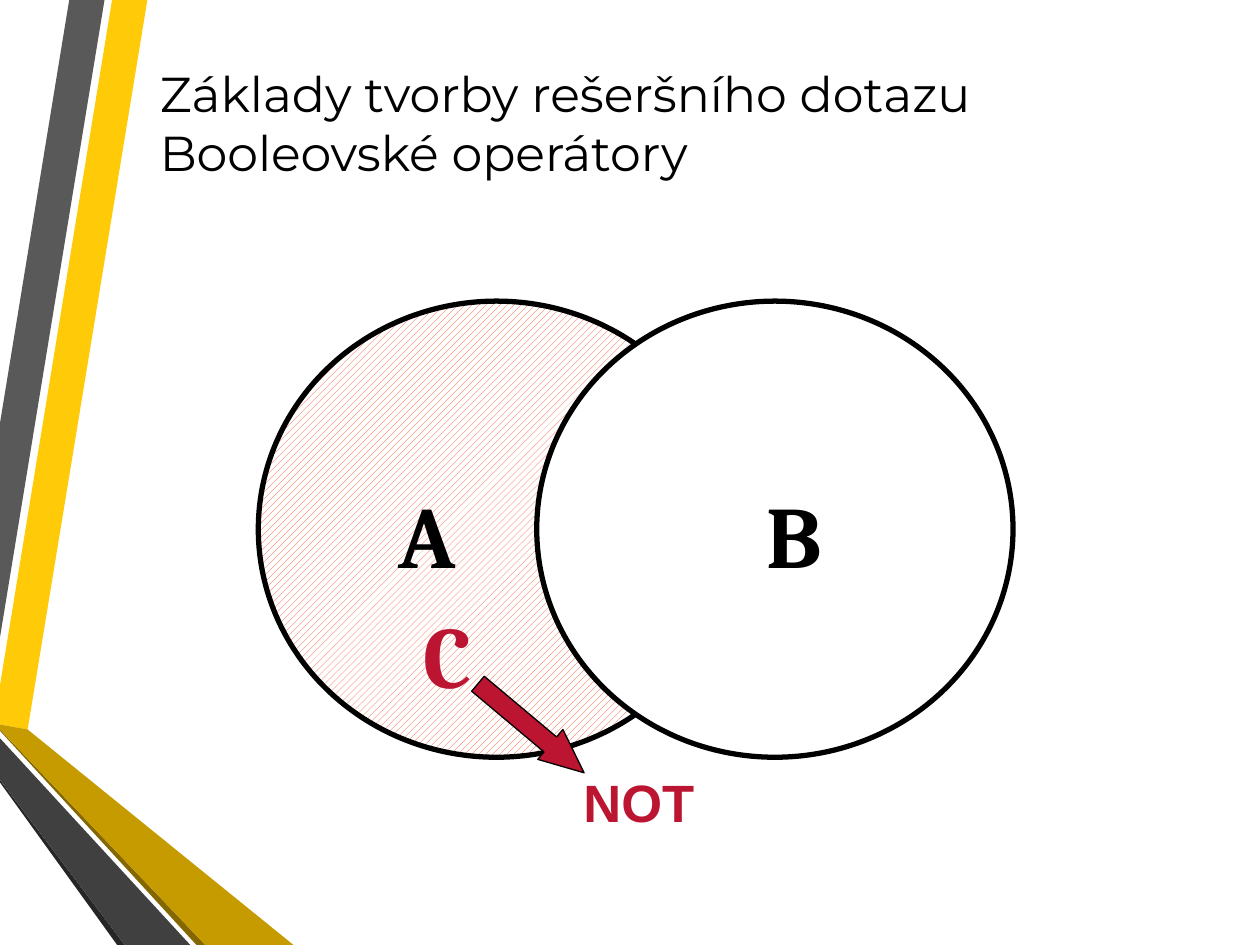
from pptx import Presentation
from pptx.dml.color import RGBColor
from pptx.enum.dml import MSO_PATTERN
from pptx.enum.shapes import MSO_SHAPE as SHAPE
from pptx.enum.text import MSO_ANCHOR as ANCHOR, PP_ALIGN as ALIGN
from pptx.util import Inches, Pt

COLORS = {
    "black": "000000", "white": "FFFFFF", "red": "BB1531", "hatch": "FE4A26",
    "yellow": "FFCA08", "gold": "C59B00", "dark_gold": "846700",
    "gray": "595959", "dark_gray": "404040", "charcoal": "262626",
}

# Ribbon corners in inches, back to front
RIBBONS = [
    ("yellow", [(0, 5.44), (0, 5.75), (0.22, 5.79), (1.17, 0), (0.89, 0)]),
    ("gray", [(0.83, 0), (0.55, 0), (0, 3.36), (0, 5.06)]),
    ("charcoal", [(0, 6.19), (0, 6.21), (0.93, 7.5), (0.99, 7.5)]),
    ("dark_gold", [(0, 5.79), (0, 5.8), (1.56, 7.5), (1.63, 7.5)]),
    ("gold", [(0, 5.79), (1.63, 7.5), (2.33, 7.5), (0.22, 5.79), (0, 5.75)]),
    ("dark_gray", [(0, 6.19), (0.99, 7.5), (1.51, 7.5), (0, 5.86)]),
]


def rgb(name):
    return RGBColor.from_string(COLORS[name])


def add_ribbon(s, color, points):
    corners = [(Inches(x), Inches(y)) for x, y in points]
    builder = s.shapes.build_freeform(*corners[0], scale=1.0)
    builder.add_line_segments(corners[1:], close=True)
    sp = builder.convert_to_shape()
    sp.shadow.inherit = False
    sp.fill.solid()
    sp.fill.fore_color.rgb = rgb(color)
    sp.line.fill.background()


def add_outlined(s, kind, box, color, line_width):
    sp = s.shapes.add_shape(kind, *map(Inches, box))
    sp.shadow.inherit = False
    sp.fill.solid()
    sp.fill.fore_color.rgb = rgb(color)
    sp.line.color.rgb = rgb("black")
    sp.line.width = Pt(line_width)
    return sp


def add_text(s, box, lines, font, size, color="black", bold=False,
             align=ALIGN.CENTER, anchor=ANCHOR.TOP, wrap=True):
    tf = s.shapes.add_textbox(*map(Inches, box)).text_frame
    tf.word_wrap = wrap
    tf.vertical_anchor = anchor
    p = tf.paragraphs[0]
    p.alignment = align
    for i, line in enumerate(lines):
        if i:
            p.add_line_break()
        r = p.add_run()
        r.text = line
        r.font.name = font
        r.font.size = Pt(size)
        r.font.bold = bold
        r.font.color.rgb = rgb(color)
    return p


def add_venn(s):
    # Set A is hatched; set B covers the shared part
    set_a, _ = [add_outlined(s, SHAPE.OVAL, (x, 2.39, 3.78, 3.62), "white", 3)
                for x in (2.05, 4.26)]
    set_a.fill.patterned()
    set_a.fill.pattern = MSO_PATTERN.WIDE_UPWARD_DIAGONAL
    set_a.fill.fore_color.rgb = rgb("hatch")
    set_a.fill.back_color.rgb = rgb("white")

    # Arrow from the result C to its operator
    arrow = add_outlined(s, SHAPE.DOWN_ARROW, (4.06, 5.23, 0.31, 1.1), "red", 0.75)
    arrow.adjustments[0] = 0.5
    arrow.adjustments[1] = 1.13
    arrow.rotation = 310

    # Letters
    for letter, x, y, color in [("A", 2.92, 3.77, "black"),
                                ("B", 5.83, 3.77, "black"),
                                ("C", 3.08, 4.72, "red")]:
        add_text(s, (x, y, 0.94, 0.93), [letter], "Cambria", 50, color, bold=True)

    # Operator name, indented one level
    p = add_text(s, (4.02, 6.06, 1.6, 0.61), ["NOT"], "Arial", 30, "red",
                 bold=True, wrap=False)
    p.level = 1
    pPr = p._p.get_or_add_pPr()
    pPr.set("marL", str(Inches(0.5)))
    pPr.set("indent", "0")


def main():
    prs = Presentation()
    prs.slide_width, prs.slide_height = Inches(10), Inches(7.5)
    s = prs.slides.add_slide(prs.slide_layouts[6])

    for color, points in RIBBONS:
        add_ribbon(s, color, points)

    # Title
    add_text(s, (1.17, 0.5, 8.43, 0.94),
             ["Základy tvorby rešeršního dotazu", "Booleovské operátory"],
             "Montserrat", 28, align=ALIGN.LEFT, anchor=ANCHOR.MIDDLE)

    add_venn(s)
    prs.save("out.pptx")


if __name__ == "__main__":
    main()
